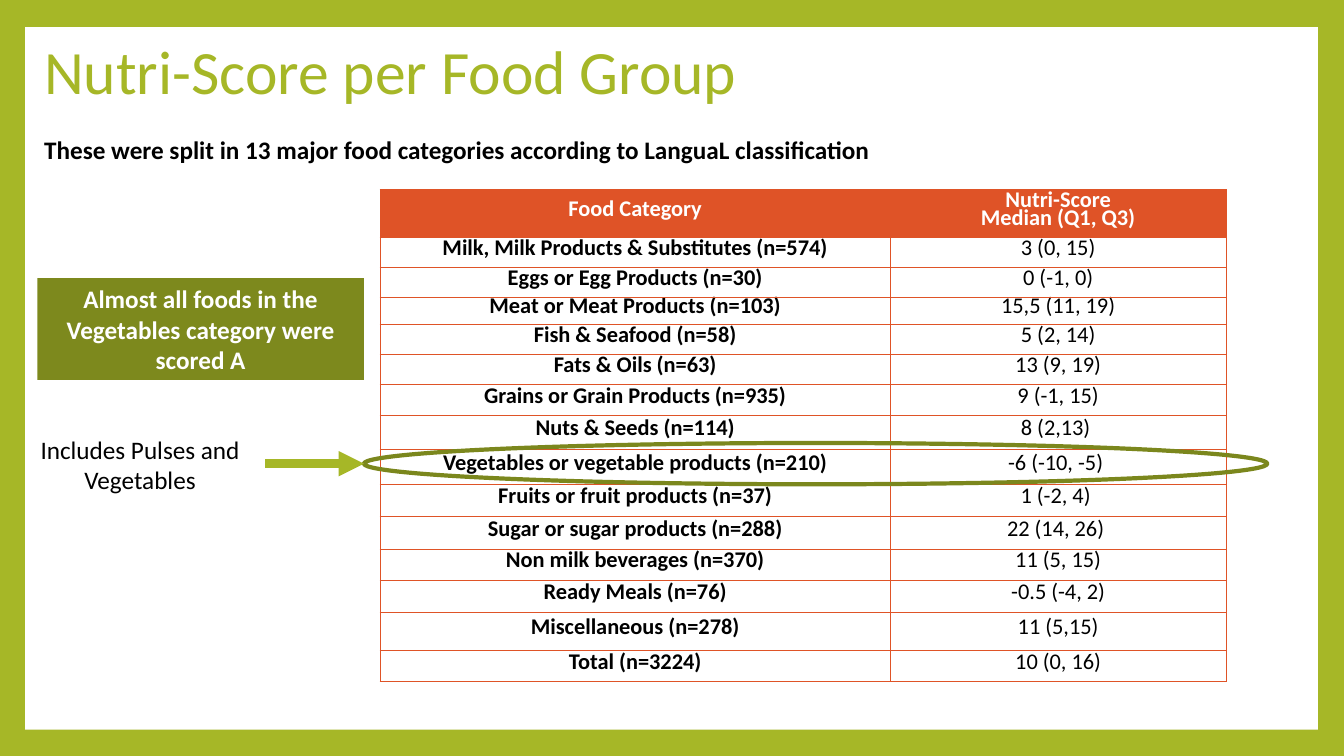
from lxml import etree
from pptx import Presentation
from pptx.dml.color import RGBColor
from pptx.enum.shapes import MSO_CONNECTOR as Connector, MSO_SHAPE as Shape
from pptx.enum.text import MSO_ANCHOR as Anchor, PP_ALIGN as Align
from pptx.oxml.ns import qn
from pptx.util import Inches, Pt

TITLE = "Nutri-Score per Food Group"
SUBTITLE = "These were split in 13 major food categories according to LanguaL classification"
FINDING = "Almost all foods in the Vegetables category were scored A"
PULSES_NOTE = "Includes Pulses and Vegetables"

# food category, median score with quartiles, row height in inches
SCORES = [
    ("Food Category", "Nutri-Score\nMedian (Q1, Q3)", 0.48),
    ("Milk, Milk Products & Substitutes (n=574)", "3 (0, 15)", 0.29),
    ("Eggs or Egg Products (n=30)", "0 (-1, 0)", 0.3),
    ("Meat or Meat Products (n=103)", "15,5 (11, 19)", 0.27),
    ("Fish & Seafood (n=58)", "5 (2, 14)", 0.3),
    ("Fats & Oils (n=63)", "13 (9, 19)", 0.3),
    ("Grains or Grain Products (n=935)", "9 (-1, 15)", 0.3),
    ("Nuts & Seeds (n=114)", "8 (2,13) ", 0.34),
    ("Vegetables or vegetable products (n=210)", "-6 (-10, -5) ", 0.35),
    ("Fruits or fruit products (n=37)", "1 (-2, 4) ", 0.32),
    ("Sugar or sugar products (n=288)", "22 (14, 26) ", 0.32),
    ("Non milk beverages (n=370)", "11 (5, 15)", 0.31),
    ("Ready Meals (n=76)", "-0.5 (-4, 2)", 0.32),
    ("Miscellaneous (n=278)", "11 (5,15)", 0.38),
    ("Total (n=3224)", "10 (0, 16)", 0.3),
]
COLUMN_WIDTHS = (5.06, 3.33)

# the ring passes between the text of the rows around the vegetables
RING_LEFT, RING_WIDTH = 3.61, 8.96
RING_MIDDLE, RING_HEIGHT = 4.6, 0.41

COLORS = {
    "lime": "A6B727",
    "olive": "7D891D",
    "ring": "7B871D",
    "orange": "DF5327",
    "white": "FFFFFF",
    "black": "000000",
}


def rgb(name):
    return RGBColor.from_string(COLORS[name])


def inches(*lengths):
    return [Inches(length) for length in lengths]


def write(frame, text, color, size=18, bold=False, align=Align.LEFT,
          spacing=None, **frame_format):
    """Fill a text frame, one paragraph per line of text."""
    for attribute, value in {"word_wrap": True, **frame_format}.items():
        setattr(frame, attribute, value)
    frame.text = text
    for paragraph in frame.paragraphs:
        paragraph.alignment = align
        if spacing:
            paragraph.line_spacing = spacing
        font_format = {"name": "Calibri", "size": Pt(size), "bold": bold}
        for run in paragraph.runs:
            for attribute, value in font_format.items():
                setattr(run.font, attribute, value)
            run.font.color.rgb = rgb(color)


def add_label(box, text, color, **text_format):
    label = slide.shapes.add_textbox(*inches(*box))
    write(label.text_frame, text, color, **text_format)


def add_figure(kind, box, fill=None, line=None):
    figure = slide.shapes.add_shape(kind, *inches(*box))
    figure.shadow.inherit = False
    if fill:
        figure.fill.solid()
        figure.fill.fore_color.rgb = rgb(fill)
    else:
        figure.fill.background()
    if line:
        figure.line.color.rgb = rgb(line)
        figure.line.width = Pt(3)
    else:
        figure.line.fill.background()
    return figure


def add_borders(cell):
    """Draw all four cell edges; they must precede the fill in the XML."""
    properties = cell._tc.get_or_add_tcPr()
    for index, edge in enumerate(("a:lnL", "a:lnR", "a:lnT", "a:lnB")):
        border = etree.Element(qn(edge), w=str(Pt(0.79)))
        solid = etree.SubElement(border, qn("a:solidFill"))
        etree.SubElement(solid, qn("a:srgbClr"), val=COLORS["orange"])
        properties.insert(index, border)


def add_score_table(left, top):
    height = sum(row[-1] for row in SCORES)
    table = slide.shapes.add_table(
        len(SCORES), len(COLUMN_WIDTHS),
        *inches(left, top, sum(COLUMN_WIDTHS), height)).table
    table.horz_banding = False
    for column, width in zip(table.columns, COLUMN_WIDTHS):
        column.width = Inches(width)
    for r, (*texts, row_height) in enumerate(SCORES):
        table.rows[r].height = Inches(row_height)
        header = r == 0
        for c, text in enumerate(texts):
            cell = table.cell(r, c)
            for side in ("left", "right", "top", "bottom"):
                setattr(cell, f"margin_{side}", 0)
            cell.vertical_anchor = Anchor.MIDDLE
            cell.fill.solid()
            cell.fill.fore_color.rgb = rgb("orange" if header else "white")
            write(cell.text_frame, text, "white" if header else "black", size=16,
                  bold=header or c == 0, align=Align.CENTER, spacing=Pt(13))
            add_borders(cell)


def add_arrow(start, end):
    arrow = slide.shapes.add_connector(Connector.STRAIGHT, *inches(*start, *end))
    arrow.line.color.rgb = rgb("lime")
    arrow.line.width = Pt(6)
    etree.SubElement(arrow.line._get_or_add_ln(), qn("a:tailEnd"), type="triangle")
    etree.SubElement(arrow._element.spPr, qn("a:effectLst"))


deck = Presentation()
deck.slide_width, deck.slide_height = inches(13.33, 7.5)
slide = deck.slides.add_slide(deck.slide_layouts[6])
slide.background.fill.solid()
slide.background.fill.fore_color.rgb = rgb("lime")

add_figure(Shape.RECTANGLE, (0.25, 0.27, 12.82, 6.97), fill="white")
add_label((0.34, 0, 10.8, 1.48), TITLE, "lime", size=44, spacing=0.9,
          vertical_anchor=Anchor.MIDDLE)
add_score_table(3.77, 1.88)
add_label((0.34, 1.28, 11.86, 0.4), SUBTITLE, "black", bold=True)
add_figure(Shape.OVAL, (RING_LEFT, RING_MIDDLE - RING_HEIGHT / 2,
                        RING_WIDTH, RING_HEIGHT), line="ring")
add_label((0.16, 4.26, 2.46, 0.71), PULSES_NOTE, "black", align=Align.CENTER)
add_arrow((2.63, RING_MIDDLE), (RING_LEFT, RING_MIDDLE))
finding = add_figure(Shape.RECTANGLE, (0.37, 2.76, 3.24, 1.01), fill="olive")
write(finding.text_frame, FINDING, "white", bold=True, align=Align.CENTER,
      vertical_anchor=Anchor.MIDDLE)

deck.save("out.pptx")
